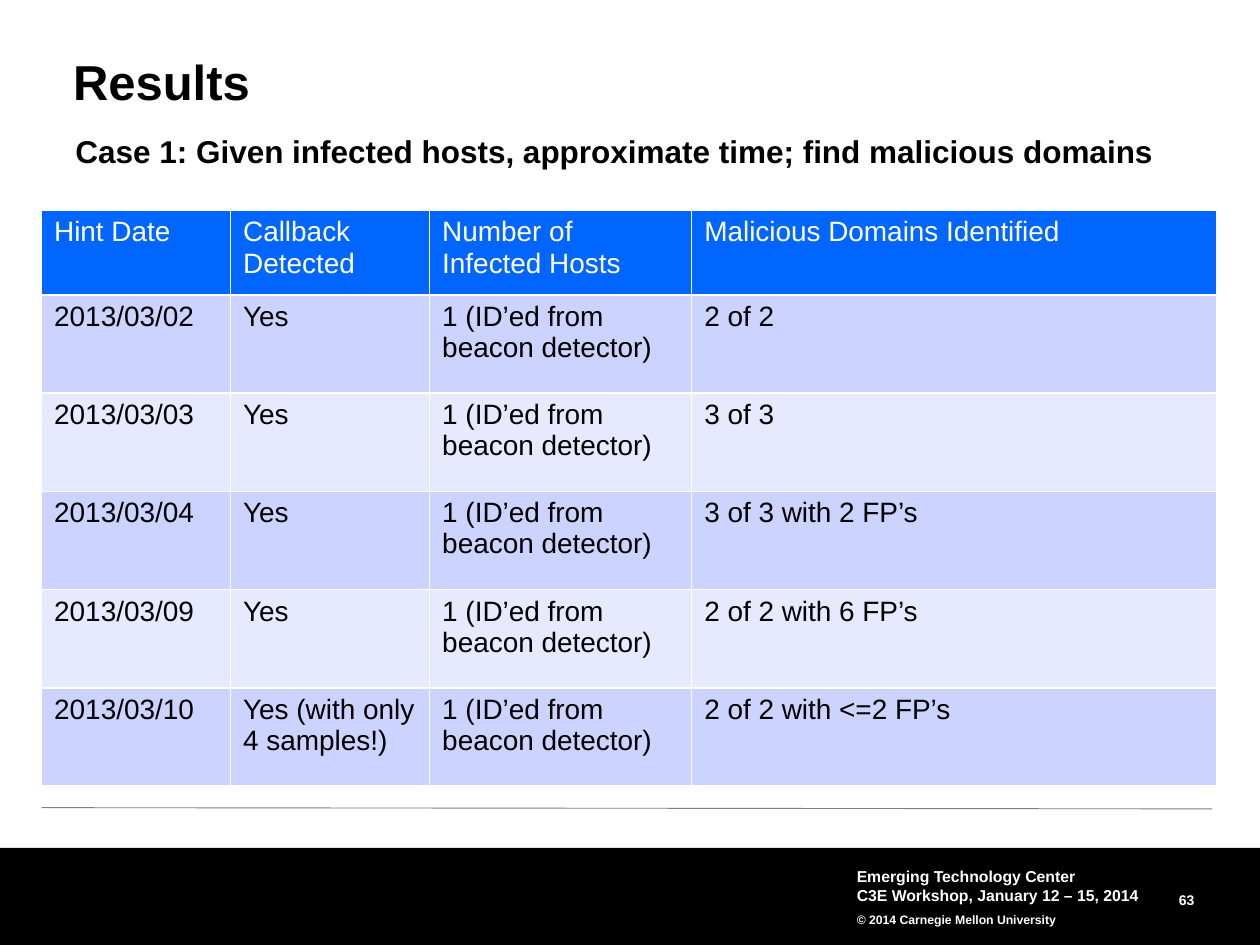
from pptx import Presentation
from pptx import util as u
from pptx.dml.color import RGBColor
from pptx.enum import shapes, text
from lxml import etree

BLACK = RGBColor(0x00, 0x00, 0x00)
WHITE = RGBColor(0xFF, 0xFF, 0xFF)
GRAY = RGBColor(0x80, 0x80, 0x80)
BLUE = RGBColor(0x00, 0x66, 0xFF)
MID = RGBColor(0xCC, 0xD3, 0xFF)
PALE = RGBColor(0xE7, 0xEA, 0xFF)


def style(para, size, color, bold=True):
    font = para.font
    font.name = "Arial"
    font.size = u.Pt(size)
    font.bold = bold
    font.color.rgb = color


def label(left, top, width, height, lines, sizes, color, inset=0,
          anchor=text.MSO_ANCHOR.MIDDLE, wrap=True):
    box = slide.shapes.add_textbox(*map(u.Inches, (left, top, width, height)))
    frame = box.text_frame
    frame.word_wrap = wrap
    frame.vertical_anchor = anchor
    frame.margin_left = frame.margin_right = u.Inches(inset)
    frame.margin_top = frame.margin_bottom = u.Inches(min(inset, 0.05))
    frame.text = "\n".join(lines)
    for para, size in zip(frame.paragraphs, sizes):
        style(para, size, color)
    return frame.paragraphs


deck = Presentation()
deck.slide_width = u.Inches(10)
deck.slide_height = u.Inches(7.5)
slide = deck.slides.add_slide(deck.slide_layouts[6])

rule = slide.shapes.add_connector(
    shapes.MSO_CONNECTOR.STRAIGHT,
    u.Inches(0.33), u.Inches(6.41), u.Inches(9.62), u.Inches(6.42))
rule.line.color.rgb = GRAY
rule.line.width = u.Pt(0.5)
props = rule._element.spPr
etree.SubElement(props, "{http://schemas.openxmlformats.org/drawingml/2006/main}effectLst")

band = slide.shapes.add_shape(
    shapes.MSO_SHAPE.RECTANGLE,
    u.Inches(0), u.Inches(6.73), u.Inches(10), u.Inches(0.77))
band.shadow.inherit = False
band.fill.solid()
band.fill.fore_color.rgb = BLACK
band.line.fill.background()

page = label(8.56, 7.03, 0.92, 0.18, ["63"], [8], WHITE)
page[0].alignment = text.PP_ALIGN.RIGHT
page[0].line_spacing = u.Pt(13)

foot = label(6.75, 6.83, 2.5, 0.58, [
    "Emerging Technology Center",
    "C3E Workshop, January 12 – 15, 2014",
    "© 2014 Carnegie Mellon University",
], [9, 9, 7], WHITE, inset=0.05)
foot[2].line_spacing = 1.5

title = label(0.58, 0.46, 8.92, 0.42, ["Results"], [28], BLACK,
              anchor=text.MSO_ANCHOR.TOP)
title[0].line_spacing = 0.9

hosts = "1 (ID’ed from beacon detector)"
rows = [
    ("Hint Date", "Callback Detected", "Number of Infected Hosts",
     "Malicious Domains Identified"),
    ("2013/03/02", "Yes", hosts, "2 of 2"),
    ("2013/03/03", "Yes", hosts, "3 of 3"),
    ("2013/03/04", "Yes", hosts, "3 of 3 with 2 FP’s"),
    ("2013/03/09", "Yes", hosts, "2 of 2 with 6 FP’s"),
    ("2013/03/10", "Yes (with only 4 samples!)", hosts, "2 of 2 with <=2 FP’s"),
]
widths = [1.5, 1.58, 2.08, 4.17]
grid = slide.shapes.add_table(
    len(rows), len(widths),
    u.Inches(0.33), u.Inches(1.67), u.Inches(9.33), u.Inches(4.58)).table
for col, width in zip(grid.columns, widths):
    col.width = u.Inches(width)
for i, row in enumerate(rows):
    grid.rows[i].height = u.Inches(0.78 if i else 0.67)
    fill = (MID if i % 2 else PALE) if i else BLUE
    for j, words in enumerate(row):
        cell = grid.cell(i, j)
        cell.text = words
        cell.fill.solid()
        cell.fill.fore_color.rgb = fill
        style(cell.text_frame.paragraphs[0], 16, BLACK if i else WHITE, False)

label(0.5, 1, 8.84, 0.4,
      ["Case 1: Given infected hosts, approximate time; find malicious domains"],
      [18], BLACK, inset=0.1, anchor=text.MSO_ANCHOR.TOP, wrap=False)

deck.save("out.pptx")
